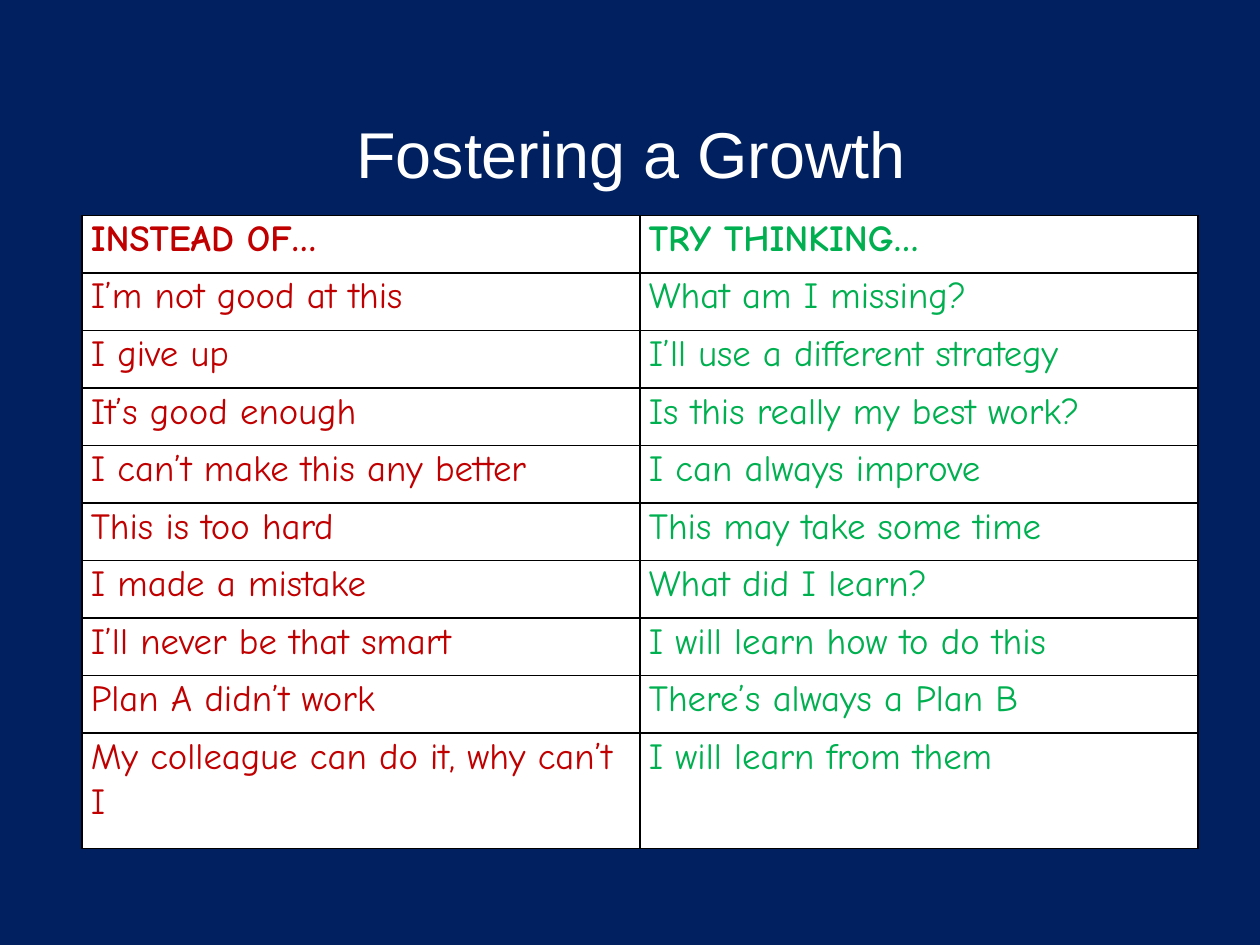
from lxml.etree import SubElement
from pptx import Presentation
from pptx.dml.color import RGBColor
from pptx.enum.text import MSO_ANCHOR, PP_ALIGN
from pptx.oxml.ns import qn
from pptx.util import Cm, Pt

COLORS = {
    "background": "002060",
    "title": "FFFFFF",
    "cell": "FFFFFF",
    "border": "000000",
    "instead": "C00000",
    "thinking": "00B050",
}
THOUGHTS = [
    ("INSTEAD OF…", "TRY THINKING…"),
    ("I’m not good at this", "What am I missing?"),
    ("I give up", "I’ll use a different strategy"),
    ("It’s good enough", "Is this really my best work?"),
    ("I can’t make this any better", "I can always improve"),
    ("This is too hard", "This may take some time"),
    ("I made a mistake", "What did I learn?"),
    ("I’ll never be that smart", "I will learn how to do this"),
    ("Plan A didn’t work", "There’s always a Plan B"),
    ("My colleague can do it, why can’t I", "I will learn from them"),
]


class MindsetSlide:
    title_font = {"name": "Arial", "size": Pt(37), "bold": False}
    table_font = {"name": "Comic Neue", "size": Pt(21)}
    title_frame = {
        "margin_left": 0,
        "margin_right": 0,
        "margin_top": 0,
        "margin_bottom": 0,
        "vertical_anchor": MSO_ANCHOR.MIDDLE,
        "word_wrap": True,
    }
    cell_format = {
        "margin_left": Cm(0.18),
        "margin_right": Cm(0.18),
        "margin_top": 0,
        "margin_bottom": 0,
        "vertical_anchor": MSO_ANCHOR.TOP,
    }

    def __init__(self, deck):
        self.slide = deck.slides.add_slide(deck.slide_layouts[5])
        self.paint(self.slide.background.fill, "background")

    def paint(self, fill, color):
        fill.solid()
        fill.fore_color.rgb = RGBColor.from_string(COLORS[color])

    def apply(self, target, values):
        for name, value in values.items():
            setattr(target, name, value)

    def add_text(self, paragraph, text, font, color):
        run = paragraph.add_run()
        run.text = text
        self.apply(run.font, font)
        run.font.color.rgb = RGBColor.from_string(COLORS[color])

    def title(self, text, left, top, width, height):
        heading = self.slide.shapes.title
        place = {"left": left, "top": top, "width": width, "height": height}
        self.apply(heading, place)
        self.apply(heading.text_frame, self.title_frame)
        paragraph = heading.text_frame.paragraphs[0]
        paragraph.alignment = PP_ALIGN.CENTER
        self.add_text(paragraph, text, self.title_font, "title")

    def border(self, cell):
        properties = cell._tc.get_or_add_tcPr()
        for position, side in enumerate(("lnL", "lnR", "lnT", "lnB")):
            line = SubElement(properties, qn(f"a:{side}"), w=str(Pt(1)))
            fill = SubElement(line, qn("a:solidFill"))
            SubElement(fill, qn("a:srgbClr"), val=COLORS["border"])
            properties.insert(position, line)

    def cell(self, cell, text, color, bold):
        self.paint(cell.fill, "cell")
        self.border(cell)
        self.apply(cell, self.cell_format)
        paragraph = cell.text_frame.paragraphs[0]
        paragraph.line_spacing = 1.07
        self.add_text(paragraph, text, {**self.table_font, "bold": bold}, color)

    def table(self, rows, colors, left, top, width, row_height):
        height = row_height * (len(rows) + 1)
        thoughts = self.slide.shapes.add_table(
            len(rows), len(colors), left, top, width, height
        ).table
        for number, texts in enumerate(rows):
            thoughts.rows[number].height = row_height
            for column, (text, color) in enumerate(zip(texts, colors)):
                self.cell(thoughts.cell(number, column), text, color, number == 0)
        thoughts.rows[len(rows) - 1].height = row_height * 2


def main():
    deck = Presentation()
    deck.slide_width, deck.slide_height = Cm(25.4), Cm(19.05)
    mindset = MindsetSlide(deck)
    mindset.title("Fostering a Growth", Cm(6.17), Cm(2.16), Cm(13.11), Cm(1.83))
    mindset.table(
        THOUGHTS, ("instead", "thinking"), Cm(1.65), Cm(4.34), Cm(22.5), Cm(1.16)
    )
    deck.save("out.pptx")


if __name__ == "__main__":
    main()
